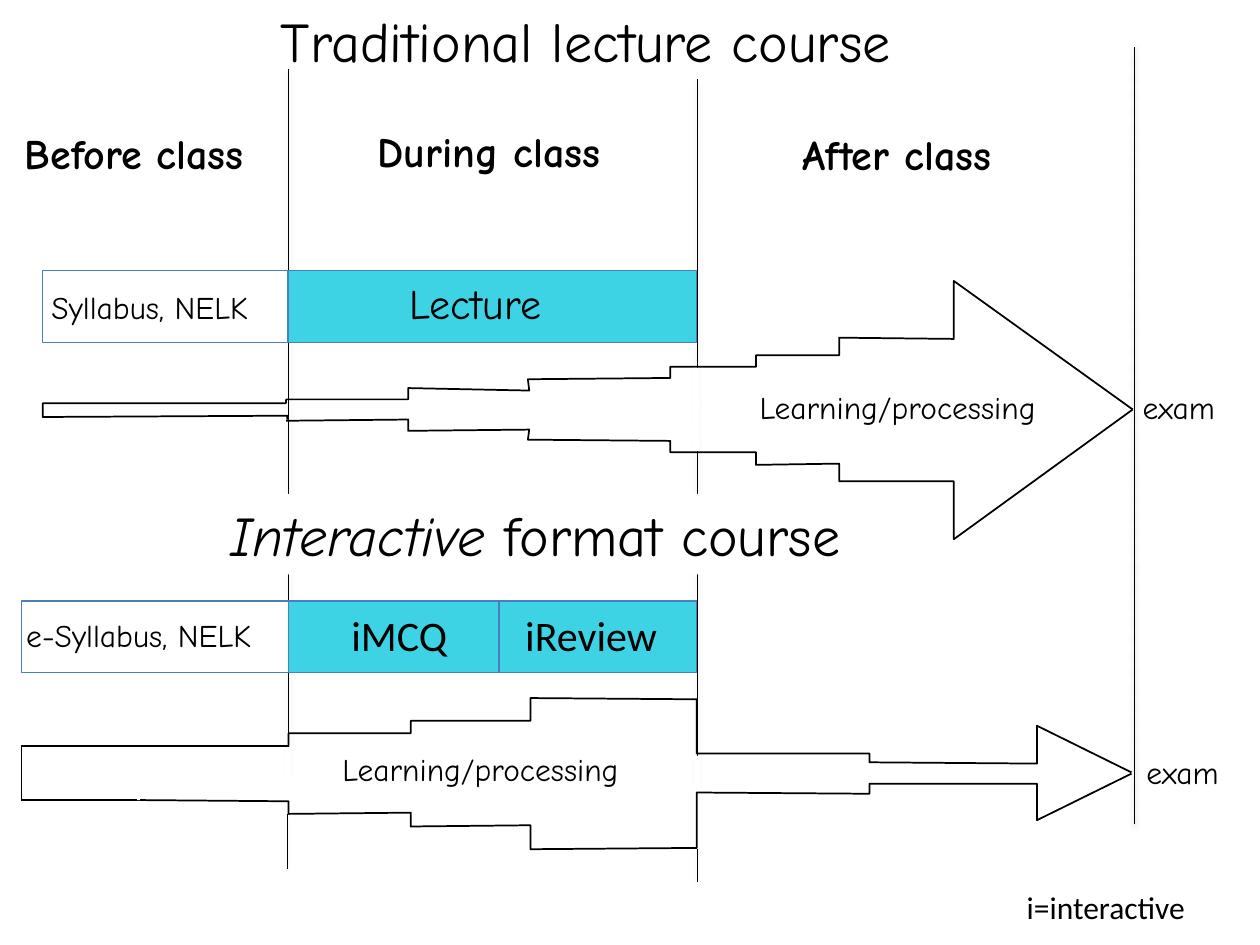
from lxml.etree import SubElement
from pptx import Presentation
from pptx.dml.color import RGBColor
from pptx.enum.dml import MSO_LINE
from pptx.enum.shapes import MSO_CONNECTOR, MSO_SHAPE
from pptx.enum.text import MSO_ANCHOR, MSO_AUTO_SIZE, PP_ALIGN
from pptx.oxml.ns import qn
from pptx.util import Inches, Pt

BLACK = RGBColor(0x00, 0x00, 0x00)
WHITE = RGBColor(0xFF, 0xFF, 0xFF)
CYAN = RGBColor(0x3D, 0xD2, 0xE4)
BLUE = RGBColor(0x4B, 0x7E, 0xBC)
COMIC, CALIBRI = "Comic Neue", "Calibri"

# Class boundaries and the exam: x, top, bottom
GUIDES = [(2.29, 0.55, 6.13), (5.53, 0.63, 6.21), (9, 0.37, 6.54)]
GUIDE_TAILS = [(5.53, 6.74, 7), (2.28, 6.46, 6.89)]

# Learning arrows, as open outlines
OUTLINES = [
    # Traditional: upper half, lower half, tail
    [(2.27, 3.17), (3.24, 3.17), (3.24, 3.08), (4.2, 3.1), (4.19, 3.01),
     (5.32, 3), (5.32, 2.91), (6, 2.91), (6, 2.82), (6.66, 2.82),
     (6.66, 2.68), (7.57, 2.69), (7.57, 2.23), (8.99, 3.25)],
    [(2.27, 3.34), (3.24, 3.33), (3.24, 3.42), (4.2, 3.41), (4.19, 3.49),
     (5.32, 3.5), (5.32, 3.59), (6, 3.59), (6, 3.69), (6.66, 3.68),
     (6.66, 3.82), (7.57, 3.82), (7.57, 4.28), (8.99, 3.25)],
    [(2.27, 3.17), (2.27, 3.2), (0.34, 3.2), (0.34, 3.31), (2.28, 3.3),
     (2.28, 3.33)],
    # Interactive: upper half, lower half
    [(1.09, 6.13), (1.09, 5.92), (2.29, 5.92), (2.29, 5.82), (3.26, 5.82),
     (3.26, 5.72), (4.21, 5.72), (4.21, 5.54), (5.53, 5.55), (5.53, 5.98),
     (6.9, 5.98), (6.9, 6.05), (8.23, 6.06), (8.23, 5.76), (8.98, 6.13)],
    [(1.09, 6.15), (1.09, 6.35), (2.29, 6.36), (2.29, 6.46), (3.26, 6.45),
     (3.26, 6.56), (4.21, 6.55), (4.21, 6.74), (5.53, 6.73), (5.53, 6.29),
     (6.9, 6.3), (6.9, 6.22), (8.23, 6.22), (8.23, 6.51), (8.98, 6.14)],
]
# Tail of the interactive arrow: x1, y1, x2, y2
TAIL_EDGES = [(0.17, 5.92, 0.17, 6.35), (0.17, 6.35, 1.09, 6.35),
              (0.17, 5.92, 1.09, 5.92)]

# Activity bars: left, top, width, fill
BAR_HEIGHT = 0.57
BARS = [
    (0.34, 2.15, 1.94, None),
    (2.29, 2.15, 3.24, CYAN),
    (0.17, 4.77, 2.12, None),
    (2.29, 4.77, 3.24, CYAN),
    (3.96, 4.77, 1.57, CYAN),
]
# White strips that open the arrows where the halves and boundaries meet
GAPS = [(5.5, 2.92, 0.05, 0.66), (5.51, 6, 0.05, 0.27),
        (2.26, 5.93, 0.05, 0.27), (1.06, 5.93, 0.05, 0.42)]

# Text, box, size, font, bold
LABELS = [
    ("Before class", (0.1, 0.96, 2.23, 0.5), 24, COMIC, True),
    ("During class", (2.9, 0.95, 2.16, 0.5), 24, COMIC, True),
    ("After class", (6.27, 0.97, 2.05, 0.5), 24, COMIC, True),
    ("Syllabus, NELK", (0.31, 2.24, 2.01, 0.71), 18, COMIC, False),
    ("Lecture", (3.15, 2.15, 1.42, 0.5), 24, COMIC, False),
    ("Learning/processing", (5.93, 3.03, 2.57, 0.4), 18, COMIC, False),
    ("exam", (8.97, 3.03, 0.81, 0.4), 18, COMIC, False),
    ("e-Syllabus, NELK", (0.11, 4.84, 2.29, 0.4), 18, COMIC, False),
    ("iMCQ", (2.69, 4.79, 0.99, 0.5), 24, CALIBRI, False),
    ("iReview", (4.07, 4.79, 1.27, 0.5), 24, CALIBRI, False),
    ("Learning/processing", (2.62, 5.9, 2.57, 0.4), 18, COMIC, False),
    ("exam", (9, 5.93, 0.81, 0.4), 18, COMIC, False),
    ("i=interactive", (8.05, 7, 1.48, 0.4), 18, CALIBRI, False),
]
TITLE = ("Traditional lecture course", (2.13, 0, 5.66, 0.64))
BANNER = (("Interactive ", "format course"), (1.73, 3.92, 5.73, 0.64))


def inches(values):
    return [Inches(v) for v in values]


def add_line(s, x1, y1, x2, y2, width=1):
    line = s.shapes.add_connector(MSO_CONNECTOR.STRAIGHT,
                                  *inches((x1, y1, x2, y2)))
    line.line.color.rgb = BLACK
    line.line.width = Pt(width)
    effects = SubElement(line._element.spPr, qn("a:effectLst"))
    return line, effects


def add_guide(s, x, top, bottom):
    """Add a dashed vertical boundary with a soft shadow below it."""
    line, effects = add_line(s, x, top, x, bottom, 0.25)
    line.line.dash_style = MSO_LINE.ROUND_DOT
    shadow = SubElement(effects, qn("a:outerShdw"), blurRad=str(Pt(3.1)),
                        dist=str(Pt(1.6)), dir="5400000", rotWithShape="0")
    color = SubElement(shadow, qn("a:srgbClr"), val=str(BLACK))
    SubElement(color, qn("a:alpha"), val="38000")


def add_outline(s, points):
    start, *rest = [inches(p) for p in points]
    builder = s.shapes.build_freeform(*start)
    builder.add_line_segments(rest, close=False)
    sp = builder.convert_to_shape()
    sp.shadow.inherit = False
    sp.fill.background()
    sp.line.color.rgb = BLACK
    sp.line.width = Pt(1)


def add_rect(s, box, fill=None, line=None):
    sp = s.shapes.add_shape(MSO_SHAPE.RECTANGLE, *inches(box))
    sp.shadow.inherit = False
    if fill is None:
        sp.fill.background()
    else:
        sp.fill.solid()
        sp.fill.fore_color.rgb = fill
    if line is None:
        sp.line.fill.background()
    else:
        sp.line.color.rgb = line
        sp.line.width = Pt(0.75)
    return sp


def set_text(sp, parts, size, font=COMIC, bold=False):
    tf = sp.text_frame
    tf.word_wrap = False
    tf.auto_size = MSO_AUTO_SIZE.SHAPE_TO_FIT_TEXT
    tf.vertical_anchor = MSO_ANCHOR.TOP
    p = tf.paragraphs[0]
    p.alignment = PP_ALIGN.LEFT
    for part in parts:
        r = p.add_run()
        r.text = part
        r.font.size = Pt(size)
        r.font.name = font
        r.font.bold = bold
        r.font.color.rgb = BLACK
    return p.runs


def main():
    prs = Presentation()
    prs.slide_width, prs.slide_height = Inches(10), Inches(7.5)
    s = prs.slides.add_slide(prs.slide_layouts[5])

    text, box = TITLE
    title = s.shapes.title
    title.left, title.top, title.width, title.height = inches(box)
    set_text(title, [text], 32)

    for guide in GUIDES:
        add_guide(s, *guide)
    for points in OUTLINES:
        add_outline(s, points)
    for left, top, width, fill in BARS:
        add_rect(s, (left, top, width, BAR_HEIGHT), fill, BLUE)

    parts, box = BANNER
    runs = set_text(add_rect(s, box, WHITE), parts, 32)
    runs[0].font.italic = True

    for gap in GAPS:
        add_rect(s, gap, WHITE)
    for tail in GUIDE_TAILS:
        add_guide(s, *tail)
    for edge in TAIL_EDGES:
        add_line(s, *edge)
    for text, box, size, font, bold in LABELS:
        set_text(s.shapes.add_textbox(*inches(box)), [text], size, font, bold)

    prs.save("out.pptx")


if __name__ == "__main__":
    main()
